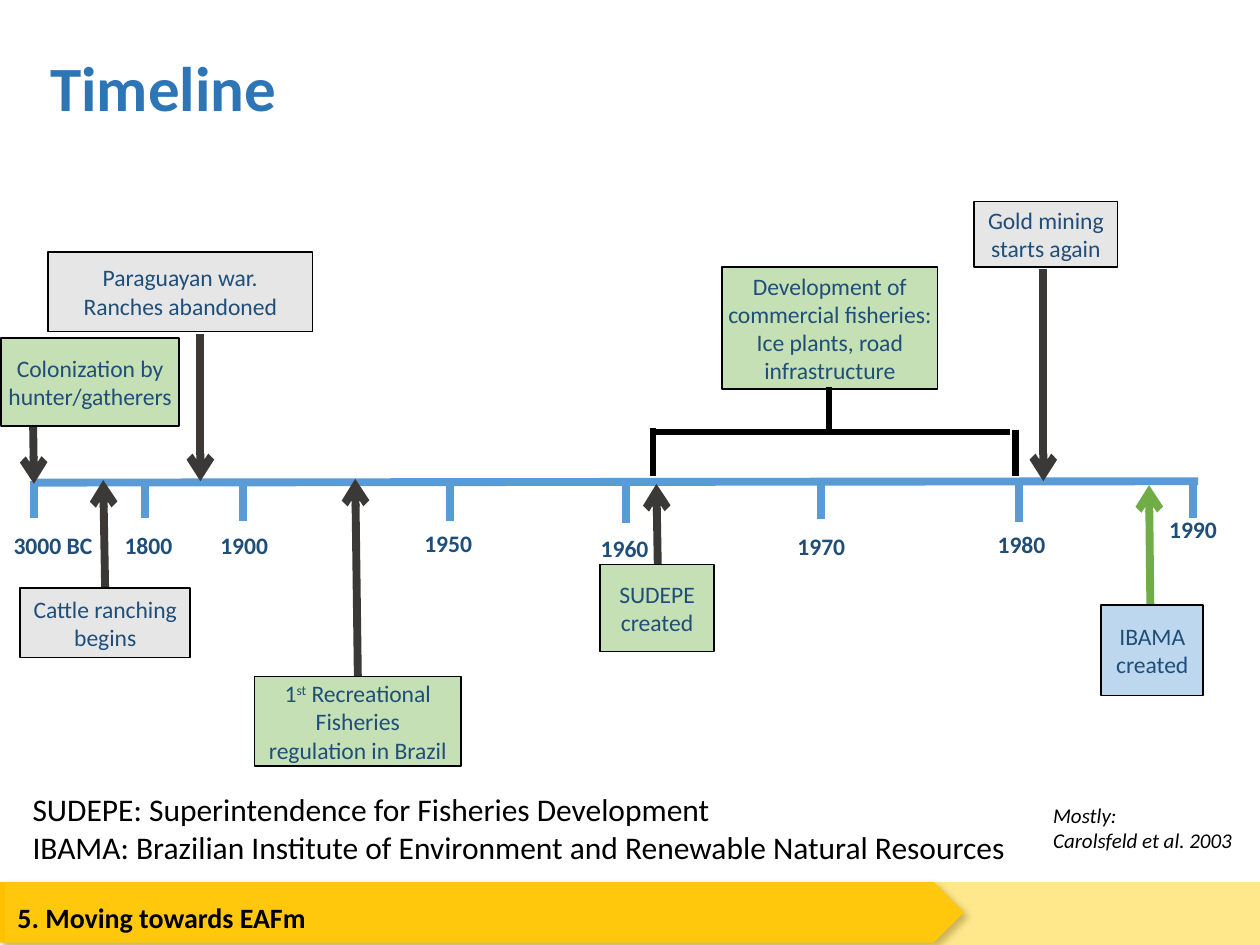
from lxml import etree
from pptx import Presentation
from pptx.dml.color import RGBColor
from pptx.enum import shapes, text
from pptx.oxml import ns
from pptx.util import Pt

HUES = {
    "black": "000000", "blue": "5B9BD5", "navy": "1F4E79", "title": "2E75B6",
    "dark": "3B3838", "leaf": "70AD47", "green": "C5E0B4", "grey": "E7E6E6",
    "sky": "BDD7EE", "gold": "FFC000", "pale": "FFD01B",
}


def hue(name):
    return RGBColor.from_string(HUES[name])


def sub(node, tag, **attrs):
    return etree.SubElement(node, ns.qn("a:" + tag), attrs)


class Board:
    face = "Calibri"
    small = 13.5

    def __init__(self, slide):
        self.slide = slide

    def style(self, para, size, tint, bold=False, slant=False):
        font = para.font
        font.name, font.size = self.face, Pt(size)
        font.bold, font.italic = bold, slant
        font.color.rgb = hue(tint)

    def title(self, words, *spot):
        head = self.slide.shapes.title
        head.left, head.top, head.width, head.height = map(Pt, spot)
        frame = head.text_frame
        frame.text = words
        frame.auto_size = text.MSO_AUTO_SIZE.NONE
        frame.vertical_anchor = text.MSO_ANCHOR.MIDDLE
        para = frame.paragraphs[0]
        para.alignment, para.line_spacing = text.PP_ALIGN.LEFT, 0.9
        self.style(para, 36, "title", bold=True)

    def shape(self, kind, fill, *spot):
        item = self.slide.shapes.add_shape(kind, *map(Pt, spot))
        item.shadow.inherit = False
        item.fill.solid()
        item.fill.fore_color.rgb = hue(fill)
        item.line.fill.background()
        return item

    def box(self, lines, fill, spot, inset=7.2):
        item = self.shape(shapes.MSO_SHAPE.RECTANGLE, fill, *spot)
        item.line.color.rgb, item.line.width = hue("black"), Pt(1)
        frame = item.text_frame
        frame.word_wrap = True
        frame.vertical_anchor = text.MSO_ANCHOR.MIDDLE
        frame.margin_left = frame.margin_right = Pt(inset)
        frame.text = "\n".join(lines)
        for para in frame.paragraphs:
            para.alignment = text.PP_ALIGN.CENTER
            self.style(para, self.small, "navy")
        return frame

    def note(self, lines, spot, size, tint="black", wrap=True, **kind):
        frame = self.slide.shapes.add_textbox(*map(Pt, spot)).text_frame
        frame.word_wrap = wrap
        frame.auto_size = text.MSO_AUTO_SIZE.SHAPE_TO_FIT_TEXT
        frame.text = "\n".join(lines)
        for para in frame.paragraphs:
            self.style(para, size, tint, **kind)

    def line(self, x1, y1, x2, y2, tint, width=4.5, arrow=False):
        link = self.slide.shapes.add_connector(
            shapes.MSO_CONNECTOR.STRAIGHT, *map(Pt, (x1, y1, x2, y2)))
        link.line.color.rgb, link.line.width = hue(tint), Pt(width)
        if arrow:
            sub(link.line._get_or_add_ln(), "tailEnd", type="arrow")
        sub(link._element.spPr, "effectLst")


# Year, tick x, tick top, label left, label top
YEARS = [
    ("3000 BC", 19.4, 275, 0.7, 300),
    ("1800", 82.8, 275, 64.1, 300),
    ("1900", 139, 276.5, 118.8, 300),
    ("1950", 257, 276.5, 235.4, 298.8),
    ("1960", 357.8, 278, 336.2, 301.7),
    ("1970", 469.4, 275.8, 448.6, 300.2),
    ("1980", 582.5, 277.2, 563, 299.5),
    ("1990", 681.8, 275, 661, 290.9),
]
ARROWS = [
    (657.4, 350, 656.6, 277.2, "leaf"),
    (376.6, 365, 375.1, 276.5, "dark"),
    (60.5, 360, 59, 274.3, "dark"),
    (18.7, 225.4, 19.4, 276.5, "dark"),
    (596.2, 154, 596.2, 275, "dark"),
    (114.5, 190.8, 114.5, 275, "dark"),
    (204.5, 387.4, 203, 273.6, "dark"),
]
EVENTS = [
    (["SUDEPE created"], "green", (342.7, 322.6, 65.5, 49.7)),
    (["Cattle ranching begins"], "grey", (11.5, 336.2, 97.2, 39.6)),
    (["Colonization by hunter/gatherers"], "green", (0.7, 193, 101.5, 50.4), 1.5),
    (["Development of commercial fisheries:", "Ice plants, road infrastructure"],
     "green", (412.6, 152.6, 123.1, 69.8), 1.5),
    (["Paraguayan war. Ranches abandoned"], "grey", (27.4, 144, 151.2, 45.4)),
    (["IBAMA created"], "sky", (629.3, 345.6, 58.3, 51.8)),
    (["Gold mining starts again"], "grey", (556.6, 115.2, 82.1, 37.4)),
]
BRACKET = [
    (373, 247, 577.4, 247),
    (373, 244.8, 373, 272.2),
    (580.3, 245.5, 580.3, 272.2),
    (473.8, 221, 473.8, 248.4),
]


def main():
    deck = Presentation()
    deck.slide_width, deck.slide_height = Pt(720), Pt(540)
    board = Board(deck.slides.add_slide(deck.slide_layouts[5]))
    board.title("Timeline", 21.6, 22.3, 650.2, 59)

    # Footer band
    band = board.shape(shapes.MSO_SHAPE.PENTAGON, "gold", 0, 504, 550.8, 34.6)
    shade = sub(band._element.spPr.find(ns.qn("a:effectLst")), "outerShdw",
                blurRad=str(Pt(4)), dist=str(Pt(3)), dir="2700000")
    sub(sub(shade, "srgbClr", val=HUES["black"]), "alpha", val="40000")
    veil = board.shape(shapes.MSO_SHAPE.RECTANGLE, "pale", 2.9, 504, 717.1, 38)
    tone = veil._element.spPr.find(ns.qn("a:solidFill"))[0]
    sub(tone, "alpha", val="50000")
    board.note(["5. Moving towards EAFm"], (2.9, 511.2, 529.2, 29.5), 16, bold=True)

    # Axis with ticks and years
    board.line(18.7, 275.8, 684.7, 275, "blue")
    for year, x, top, left, low in YEARS:
        board.line(x, top, x, top + 21, "blue")
        wide = 60.5 if "BC" in year else 42.5
        board.note([year], (left, low, wide, 23.8), board.small, "navy",
                   wrap=False, bold=True)

    # Events
    for arrow in ARROWS:
        board.line(*arrow, arrow=True)
    for event in EVENTS:
        board.box(*event)
    rule = board.box(["1"], "green", (145.4, 386.6, 118.1, 51.1)).paragraphs[0]
    high = rule.add_run()
    high.text = "st"
    high.font._element.set("baseline", "30000")
    rule.add_run().text = " Recreational Fisheries regulation in Brazil"

    # Span of commercial fishing
    for part in BRACKET:
        board.line(*part, "black", 3.5)

    # Key and source
    board.note(["SUDEPE: Superintendence for Fisheries Development",
                "IBAMA: Brazilian Institute of Environment and Renewable Natural Resources"],
               (11.5, 447.8, 610.6, 51.1), 18)
    board.note(["Mostly:", "Carolsfeld et al. 2003"], (594.7, 455, 118.1, 36), 12,
               slant=True)

    deck.save("out.pptx")


if __name__ == "__main__":
    main()
